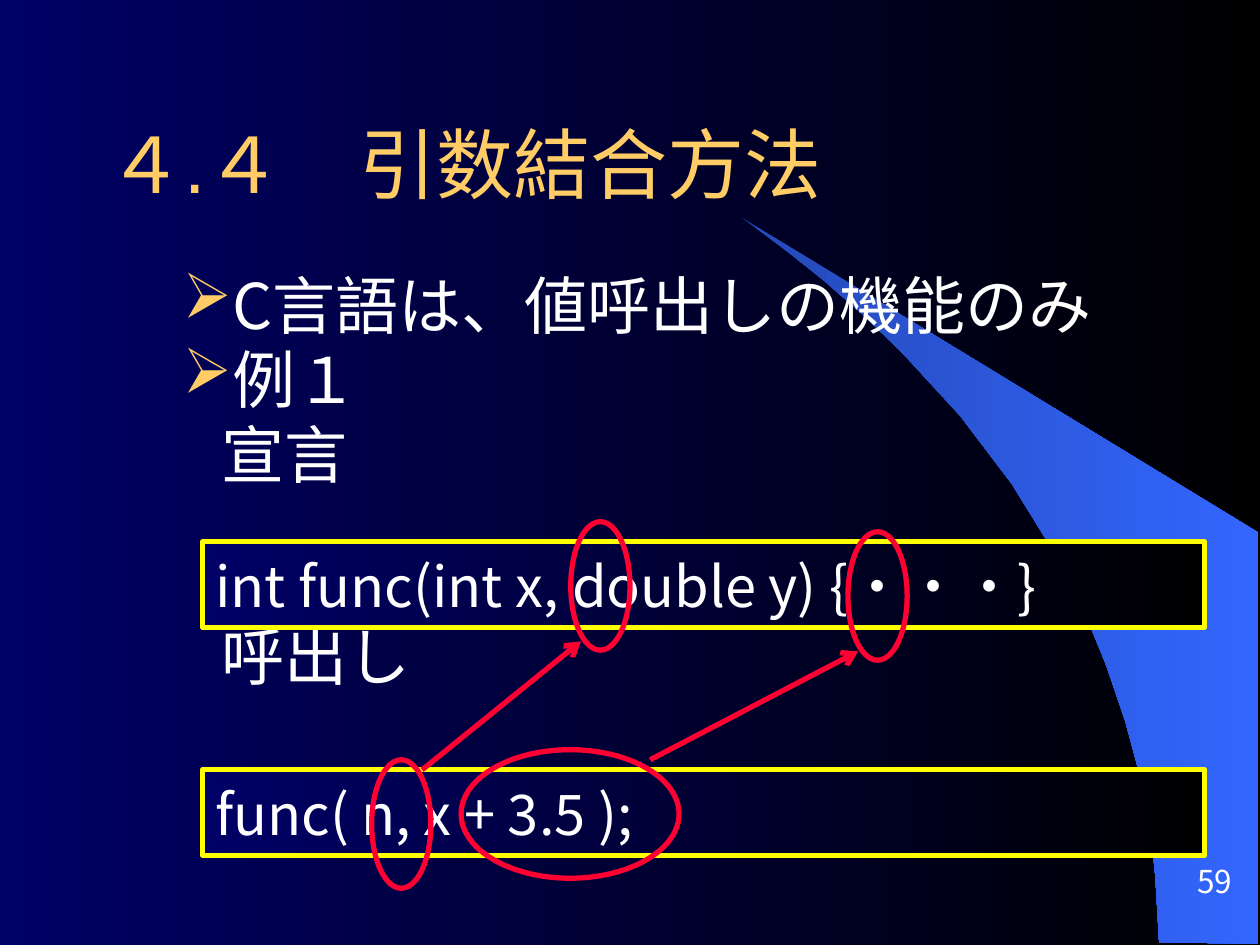
from lxml import etree
from pptx import Presentation
from pptx import util as u
from pptx.dml.color import RGBColor
from pptx.enum import shapes, text
from pptx.oxml.ns import qn

CJK = "Noto Sans CJK JP"
WHITE, GOLD, YELLOW, RED = "FFFFFF", "FFCC66", "FFFF00", "FF0033"
NIGHT = ("000066", "000000")


def rgb(value):
    return RGBColor.from_string(value)


def gradient(fill, colors):
    fill.gradient()
    fill.gradient_angle = 0
    for stop, color in zip(fill.gradient_stops, colors):
        stop.color.rgb = rgb(color)


class Deck:
    """Holds the style and the current slide."""

    def __init__(self, width, height):
        self.prs = Presentation()
        self.prs.slide_width = u.Inches(width)
        self.prs.slide_height = u.Inches(height)
        self.slide = self.prs.slides.add_slide(self.prs.slide_layouts[5])
        gradient(self.slide.background.fill, NIGHT)

    def place(self, box):
        return [u.Inches(value) for value in box]

    def frame(self, shape, margins=(0.1, 0.05), **settings):
        side, end = map(u.Inches, margins)
        values = {"margin_left": side, "margin_right": side,
                  "margin_top": end, "margin_bottom": end,
                  "word_wrap": True, "auto_size": text.MSO_AUTO_SIZE.NONE}
        for name, value in {**values, **settings}.items():
            setattr(shape.text_frame, name, value)
        return shape.text_frame

    def add_words(self, paragraph, words, size, color=WHITE, font=CJK, **settings):
        run = paragraph.add_run()
        run.text = words
        run.font.color.rgb = rgb(color)
        for name, value in {"size": u.Pt(size), "name": font, "bold": False}.items():
            setattr(run.font, name, value)
        east_asian = etree.SubElement(run._r.get_or_add_rPr(), qn("a:ea"))
        east_asian.set("typeface", CJK)
        values = {"alignment": text.PP_ALIGN.LEFT, **settings}
        for name, value in values.items():
            setattr(paragraph, name, value)

    def title(self, words, box):
        heading = self.slide.shapes.title
        for name, value in zip(("left", "top", "width", "height"), self.place(box)):
            setattr(heading, name, value)
        frame = self.frame(heading, vertical_anchor=text.MSO_ANCHOR.MIDDLE)
        self.add_words(frame.paragraphs[0], words, 44, GOLD, "Arial")

    def outline(self, items, box):
        body = self.slide.shapes.add_textbox(*self.place(box))
        frame = self.frame(body, (0.2, 0.05))
        for index, (words, bulleted, gap) in enumerate(items):
            paragraph = frame.add_paragraph() if index else frame.paragraphs[0]
            self.add_words(paragraph, words, 36, line_spacing=0.82,
                           space_before=u.Pt(gap))
            props = paragraph._p.get_or_add_pPr()
            props.set("marL", str(u.Inches(0.81)))
            props.set("indent", str(u.Inches(-0.31 if bulleted else 0)))
            if bulleted:
                tint = etree.SubElement(props, qn("a:buClr"))
                etree.SubElement(tint, qn("a:srgbClr")).set("val", GOLD)
                etree.SubElement(props, qn("a:buChar")).set("char", "➢")

    def page_number(self, words, box):
        number = self.slide.shapes.add_textbox(*self.place(box))
        frame = self.frame(number, (0.1, 0), vertical_anchor=text.MSO_ANCHOR.BOTTOM)
        self.add_words(frame.paragraphs[0], words, 18, alignment=text.PP_ALIGN.RIGHT)

    def outlined(self, kind, box, color):
        shape = self.slide.shapes.add_shape(kind, *self.place(box))
        shape.shadow.inherit = False
        shape.line.color.rgb = rgb(color)
        shape.line.width = u.Pt(3)
        return shape

    def code(self, words, top):
        box = (1.61, top, 7.95, 0.68)
        panel = self.outlined(shapes.MSO_SHAPE.RECTANGLE, box, YELLOW)
        gradient(panel.fill, NIGHT)
        frame = self.frame(panel, vertical_anchor=text.MSO_ANCHOR.MIDDLE)
        self.add_words(frame.paragraphs[0], words, 32)

    def ring(self, left, top, width=0.47):
        box = (left, top, width, 1.02)
        self.outlined(shapes.MSO_SHAPE.OVAL, box, RED).fill.background()

    def arrow(self, start, end):
        link = self.slide.shapes.add_connector(
            shapes.MSO_CONNECTOR.STRAIGHT, *self.place(start + end))
        link.line.color.rgb = rgb(RED)
        link.line.width = u.Pt(3)
        props = link._element.spPr
        etree.SubElement(props.find(qn("a:ln")), qn("a:tailEnd")).set("type", "arrow")
        etree.SubElement(props, qn("a:effectLst"))

    def swoosh(self, points, colors):
        start, *others = [self.place(point) for point in points]
        builder = self.slide.shapes.build_freeform(*start)
        builder.add_line_segments(others, close=True)
        shape = builder.convert_to_shape()
        shape.shadow.inherit = False
        shape.line.fill.background()
        gradient(shape.fill, colors)


def main():
    deck = Deck(10, 7.5)

    # Background sweep
    deck.swoosh([(9.2, 7.48), (9.99, 7.49), (9.99, 4.23), (5.89, 1.73), (6.24, 1.99),
                 (6.53, 2.22), (6.85, 2.5), (7.16, 2.8), (7.62, 3.3), (8.03, 3.84),
                 (8.32, 4.31), (8.58, 4.79), (8.78, 5.28), (8.93, 5.72), (9.03, 6.09),
                 (9.13, 6.56), (9.17, 6.96)], ("2449B6", "3366FF"))

    # Title, outline and page number
    deck.title("４.４　引数結合方法", (0.75, 0.67, 8.84, 1.25))
    deck.outline([("C言語は、値呼出しの機能のみ", True, 7.2),
                  ("例１", True, 7.2),
                  ("宣言", False, 7.2),
                  ("呼出し", False, 80)], (0.75, 2.17, 8.5, 3.95))
    deck.page_number("59", (8.86, 6.72, 1.02, 0.42))

    # Declaration and call
    deck.code("int func(int x, double y) {・・・}", 4.3)
    deck.code("func( n, x + 3.5 );", 6.11)

    # Arguments bound to parameters
    deck.ring(2.95, 6.03)
    deck.ring(4.53, 4.14)
    deck.ring(3.66, 5.95, 1.73)
    deck.ring(6.73, 4.22)
    deck.arrow((5.16, 6.03), (6.81, 5.17))
    deck.arrow((3.35, 6.11), (4.61, 5.09))

    deck.prs.save("out.pptx")


if __name__ == "__main__":
    main()
